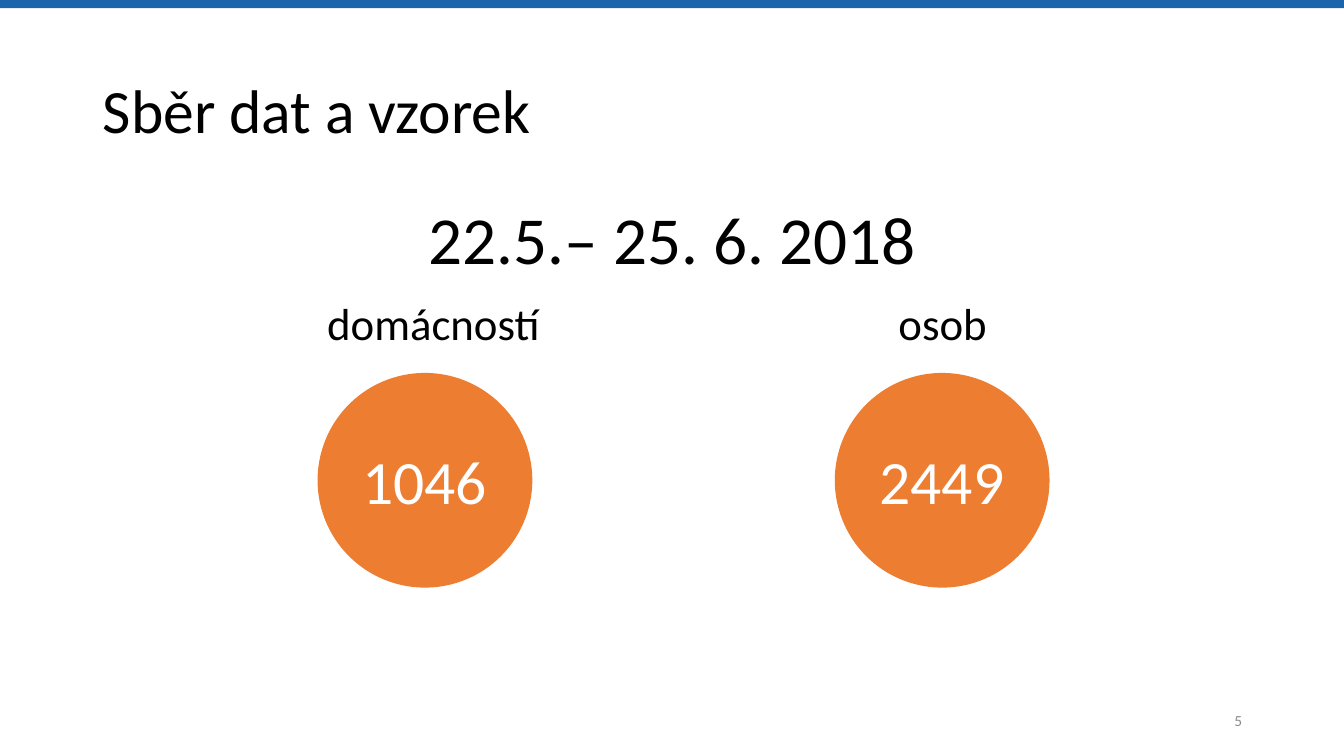
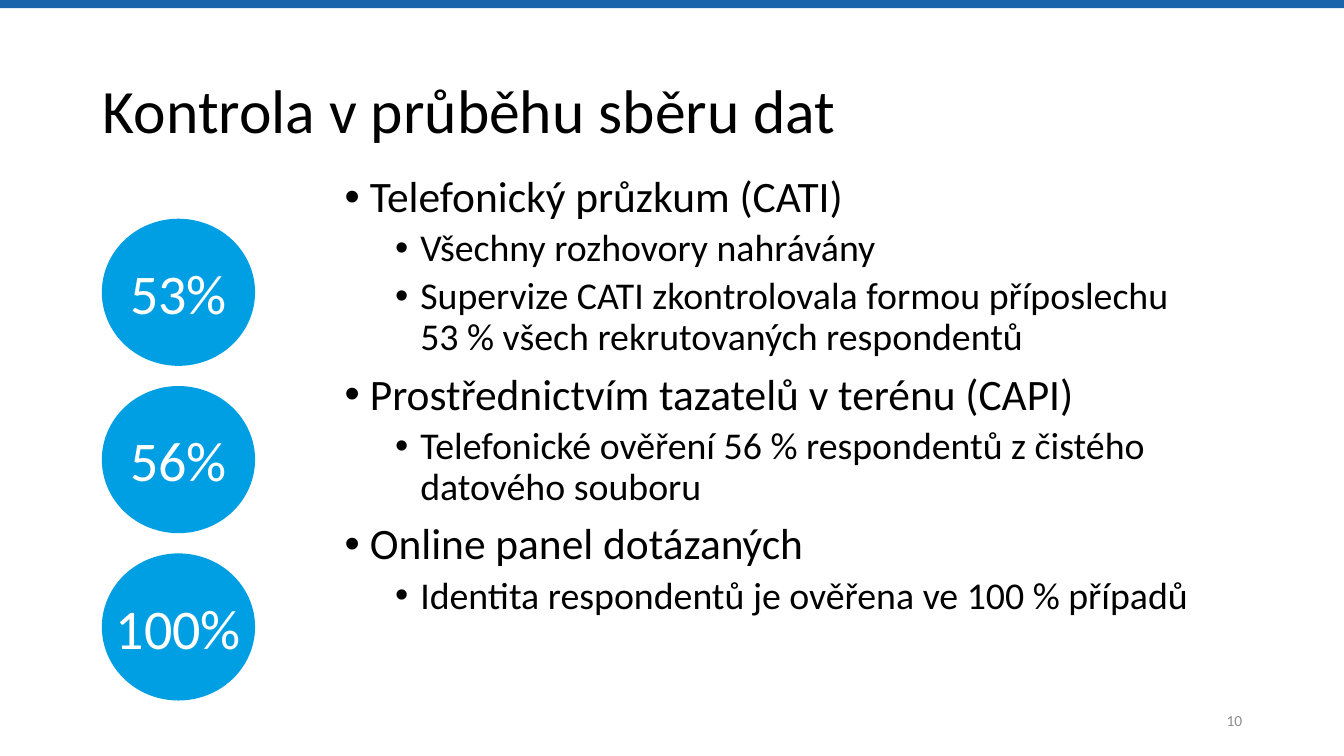
"""Build two slides on the survey sample and on quality control."""
from lxml import etree
from pptx import Presentation
from pptx.dml.color import RGBColor
from pptx.enum import shapes, text as txt
from pptx.oxml import ns
from pptx.util import Inches, Pt

BLACK, WHITE, GREY = "000000", "FFFFFF", "8C8C8C"
BLUE, ORANGE, CYAN = "1964AA", "ED7D31", "009FE3"
LEFT, MID, RIGHT = txt.PP_ALIGN.LEFT, txt.PP_ALIGN.CENTER, txt.PP_ALIGN.RIGHT
TOP, CENTER = txt.MSO_ANCHOR.TOP, txt.MSO_ANCHOR.MIDDLE


def write(shape, words, size=32, color=BLACK, align=LEFT, anchor=TOP,
          line=1.0, before=0, level=None, wrap=True, more=False):
    frame = shape.text_frame
    frame.word_wrap = wrap
    frame.auto_size = txt.MSO_AUTO_SIZE.NONE
    frame.vertical_anchor = anchor
    para = frame.add_paragraph() if more else frame.paragraphs[0]
    para.text = words
    para.alignment = align
    para.line_spacing = line
    para.space_before = Pt(before)
    for run in para.runs:
        run.font.name = "Calibri"
        run.font.size = Pt(size)
        run.font.color.rgb = RGBColor.from_string(color)
    if level is not None:
        para.level = level
        props = para._p.get_or_add_pPr()
        props.set("marL", str(Inches(0.25 + 0.5 * level)))
        props.set("indent", str(Inches(-0.25)))
        etree.SubElement(props, ns.qn("a:buFont"), typeface="Arial")
        etree.SubElement(props, ns.qn("a:buChar"), char="•")


def draw(slide, kind, box, color):
    shape = slide.shapes.add_shape(kind, *map(Inches, box))
    shape.shadow.inherit = False
    shape.fill.solid()
    shape.fill.fore_color.rgb = RGBColor.from_string(color)
    shape.line.fill.background()
    return shape


deck = Presentation()
deck.slide_width, deck.slide_height = Inches(13.33), Inches(7.5)

pages = []
for head, number in [("Sběr dat a vzorek", "5"), ("Kontrola v průběhu sběru dat", "10")]:
    page = deck.slides.add_slide(deck.slide_layouts[5])
    draw(page, shapes.MSO_SHAPE.RECTANGLE, (0, 0, 13.33, 0.08), BLUE)
    title = page.shapes.title
    title.left, title.top, title.width, title.height = map(Inches, (0.92, 0.4, 11.5, 1.45))
    write(title, head, size=44, anchor=CENTER, line=0.9)
    foot = page.shapes.add_textbox(*map(Inches, (9.42, 6.95, 3, 0.4)))
    write(foot, number, size=11, color=GREY, align=RIGHT, anchor=CENTER)
    pages.append(page)
sample, control = pages

dates = sample.shapes.add_textbox(*map(Inches, (0.92, 2, 11.5, 0.8)))
write(dates, "22.5.– 25. 6. 2018", size=48, align=MID, line=0.9, before=10)
for label, count, left, mid in [("domácností", "1046", 3.15, 4.3), ("osob", "2449", 8.28, 9.35)]:
    box = sample.shapes.add_textbox(*map(Inches, (mid - 1.37, 2.88, 2.74, 0.64)))
    write(box, label, align=MID)
    disc = draw(sample, shapes.MSO_SHAPE.OVAL, (left, 3.7, 2.13, 2.13), ORANGE)
    write(disc, count, size=44, color=WHITE, align=MID, anchor=CENTER)

for row, share in enumerate(["53%", "56%", "100%"]):
    disc = draw(control, shapes.MSO_SHAPE.OVAL, (1.01, 2.17 + 1.66 * row, 1.52, 1.46), CYAN)
    write(disc, share, size=40, color=WHITE, align=MID, anchor=CENTER, wrap=False)

points = [
    (0, "Telefonický průzkum (CATI)"),
    (1, "Všechny rozhovory nahrávány"),
    (1, "Supervize CATI zkontrolovala formou příposlechu\v53 % všech rekrutovaných respondentů"),
    (0, "Prostřednictvím tazatelů v terénu (CAPI)"),
    (1, "Telefonické ověření 56 % respondentů z čistého datového souboru"),
    (0, "Online panel dotázaných"),
    (1, "Identita respondentů je ověřena ve 100 % případů"),
]
body = control.shapes.add_textbox(*map(Inches, (3.32, 1.69, 9.12, 5.25)))
for row, (level, words) in enumerate(points):
    write(body, words, size=31 - 4 * level, line=0.9, before=10 - 5 * level,
          level=level, more=row > 0)

deck.save("out.pptx")
